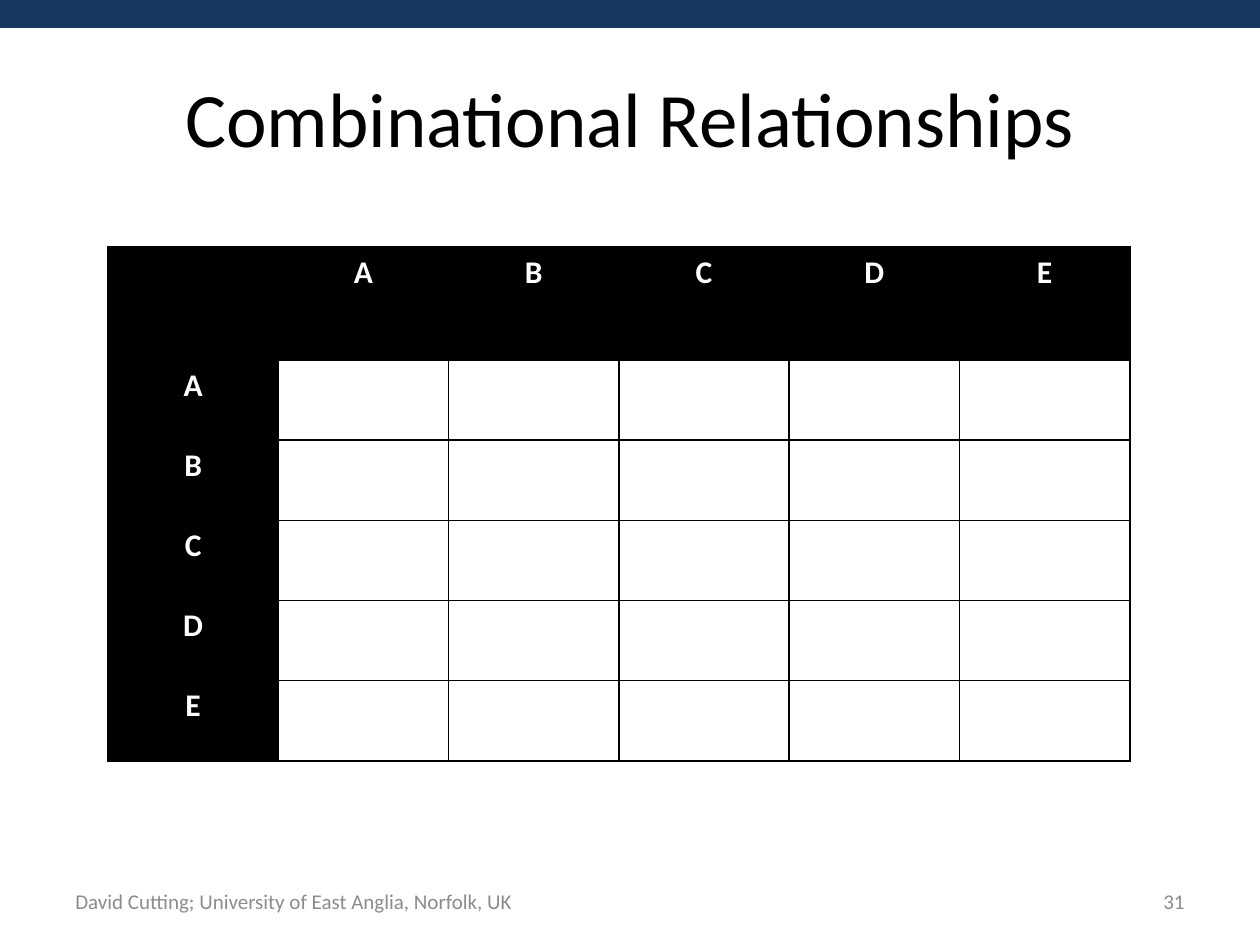
from dataclasses import dataclass

from lxml.etree import SubElement
from pptx import Presentation
from pptx.dml.color import RGBColor as RGB
from pptx.enum.shapes import MSO_SHAPE as Shape
from pptx.enum.text import MSO_ANCHOR as Anchor, PP_ALIGN as Align
from pptx.oxml.ns import qn
from pptx.util import Emu, Pt


@dataclass
class Theme:
    font: str = "Calibri"
    band: str = "17375E"
    ink: str = "000000"
    paper: str = "FFFFFF"
    muted: str = "8C8C8C"
    title: int = 44
    body: int = 18
    foot: int = 12


def px(n):
    return Emu(round(n * 914400 / 126))


class Deck:
    def __init__(self, theme, slide):
        self.theme = theme
        self.slide = slide

    def style(self, para, size, color, align, bold=False):
        para.alignment = align
        for run in para.runs:
            font = run.font
            font.name, font.size, font.bold = self.theme.font, Pt(size), bold
            font.color.rgb = RGB.from_string(color)

    def bar(self, box, color):
        bar = self.slide.shapes.add_shape(Shape.RECTANGLE, *map(px, box))
        bar.shadow.inherit = False
        bar.fill.solid()
        bar.fill.fore_color.rgb = RGB.from_string(color)
        bar.line.fill.background()

    def text(self, box, words, size, color, align=Align.LEFT):
        frame = self.slide.shapes.add_textbox(*map(px, box)).text_frame
        frame.word_wrap = True
        frame.vertical_anchor = Anchor.MIDDLE
        frame.text = words
        self.style(frame.paragraphs[0], size, color, align)

    def border(self, cell):
        props = cell._tc.get_or_add_tcPr()
        for at, side in enumerate(("lnL", "lnR", "lnT", "lnB")):
            line = SubElement(props, qn(f"a:{side}"), w=str(Pt(1)))
            fill = SubElement(line, qn("a:solidFill"))
            SubElement(fill, qn("a:srgbClr"), val=self.theme.ink)
            props.insert(at, line)  # borders come before the fill

    def matrix(self, box, names, head):
        """Draw an empty grid with the same names across and down."""
        theme = self.theme
        count = len(names) + 1
        width, height = box[2:]
        table = self.slide.shapes.add_table(count, count, *map(px, box)).table
        table.first_row = table.horz_banding = False
        for col in table.columns:
            col.width = px(width / count)
        for row in table.rows:
            row.height = px((height - head) / len(names))
        table.rows[0].height = px(head)

        labels = ["", *names]
        for r in range(count):
            for c in range(count):
                cell = table.cell(r, c)
                edge = r == 0 or c == 0
                cell.fill.solid()
                cell.fill.fore_color.rgb = RGB.from_string(
                    theme.ink if edge else theme.paper)
                self.border(cell)
                if edge and r != c:
                    cell.text_frame.text = labels[r or c]
                    self.style(cell.text_frame.paragraphs[0], theme.body,
                               theme.paper, Align.CENTER, True)


def main():
    prs = Presentation()
    prs.slide_width, prs.slide_height = px(1260), px(945)
    theme = Theme()
    deck = Deck(theme, prs.slides.add_slide(prs.slide_layouts[6]))

    # Top band and title
    deck.bar((0, -1, 1260, 29), theme.band)
    deck.text((63, 38, 1134, 157), "Combinational Relationships",
              theme.title, theme.ink, Align.CENTER)

    # Footer
    deck.text((63, 876, 766, 50),
              "David Cutting; University of East Anglia, Norfolk, UK",
              theme.foot, theme.muted)
    deck.text((903, 876, 294, 50), "31", theme.foot, theme.muted, Align.RIGHT)

    # Relationship grid
    deck.matrix((108, 247, 1022, 514), "ABCDE", head=113)

    prs.save("out.pptx")


if __name__ == "__main__":
    main()
